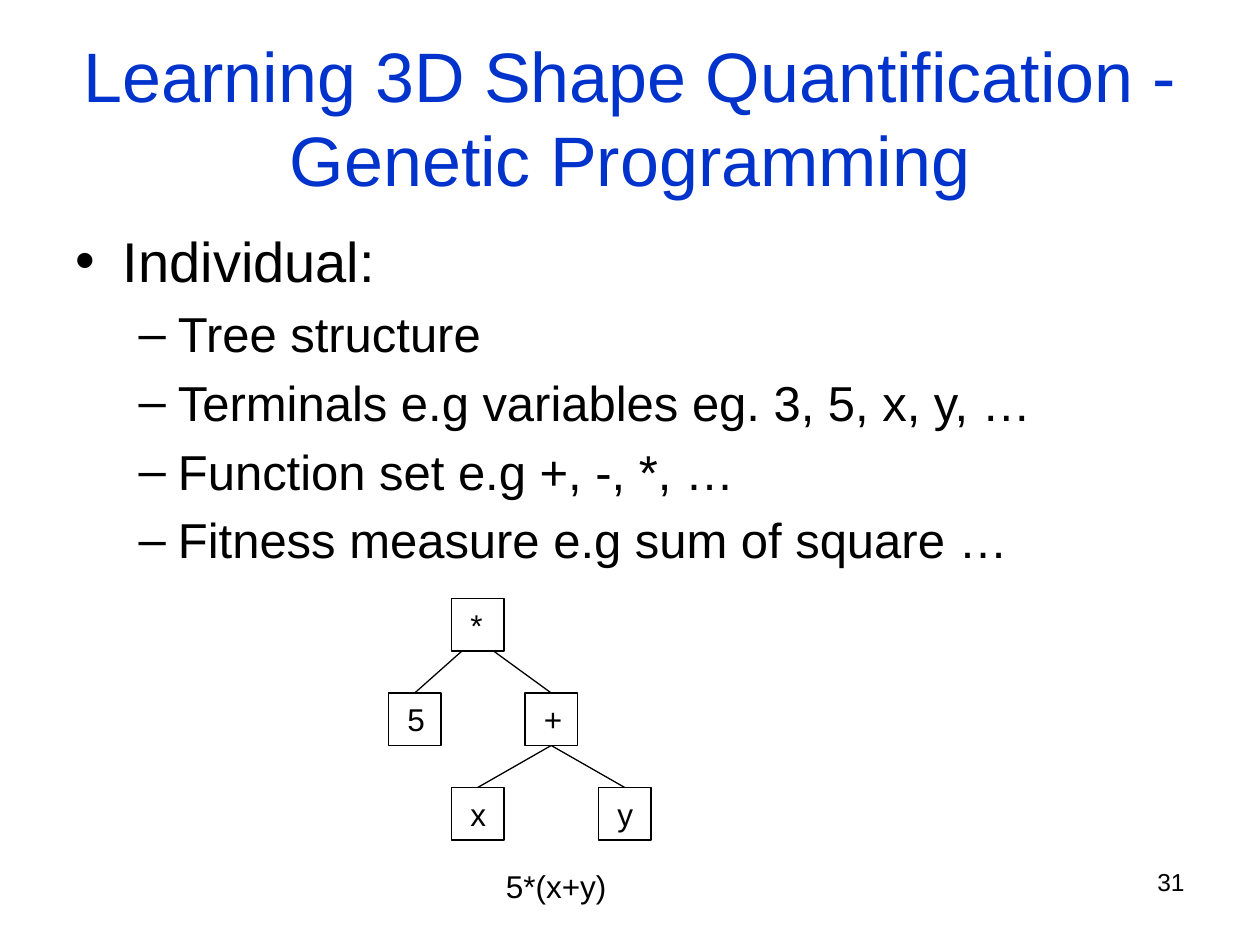
from pptx import Presentation
from pptx.dml.color import RGBColor
from pptx.enum.shapes import MSO_CONNECTOR as Connector, MSO_SHAPE as Shape
from pptx.enum.text import MSO_ANCHOR as Anchor, MSO_AUTO_SIZE as AutoSize, PP_ALIGN as Align
from pptx.oxml.ns import qn
from pptx.util import Inches, Pt
from lxml.etree import SubElement

FONT = "Arial"
BLACK, BLUE = "000000", "0033CC"
CELL = Inches(1) // 12
NODE = 5

TITLE = "Learning 3D Shape Quantification -\vGenetic Programming"
POINTS = [
    ("Individual:", 0),
    ("Tree structure", 1),
    ("Terminals e.g variables eg. 3, 5, x, y, …", 1),
    ("Function set e.g +, -, *, …", 1),
    ("Fitness measure e.g sum of square …", 1),
]
NODES = {"*": (6, 0), "5": (0, 9), "+": (13, 9), "x": (6, 18), "y": (20, 18)}
BRANCHES = [("*", "5", 1), ("*", "+", 4), ("+", "x", None), ("+", "y", None)]


def color(hex_string):
    return RGBColor.from_string(hex_string)


def grid(*cells):
    return [round(cell * CELL) for cell in cells]


def style(paragraph, size, hex_string=BLACK, align=None):
    paragraph.font.name = FONT
    paragraph.font.size = Pt(size)
    paragraph.font.color.rgb = color(hex_string)
    paragraph.alignment = align


def place(shape, box):
    shape.left, shape.top, shape.width, shape.height = box


def outline(shape):
    shape.line.color.rgb = color(BLACK)
    shape.line.width = Pt(0.75)


def add_title(slide, box):
    title = slide.shapes.title
    place(title, box)
    frame = title.text_frame
    frame.text = TITLE
    frame.auto_size = AutoSize.NONE
    frame.vertical_anchor = Anchor.MIDDLE
    style(frame.paragraphs[0], 40, BLUE, Align.CENTER)


def add_points(slide, box):
    body = slide.placeholders[1]
    place(body, box)
    frame = body.text_frame
    frame.text = "\n".join(text for text, _ in POINTS)
    frame.auto_size = AutoSize.NONE
    for paragraph, (_, level) in zip(frame.paragraphs, POINTS):
        paragraph.level = level
        style(paragraph, 28 if level else 32)


def add_label(shapes, box, text, size, align=Align.LEFT, wrap=True):
    label = shapes.add_textbox(*box)
    frame = label.text_frame
    frame.word_wrap = wrap
    frame.text = text
    style(frame.paragraphs[0], size, align=align)


def add_node(shapes, box, symbol):
    node = shapes.add_shape(Shape.RECTANGLE, *box)
    node.shadow.inherit = False
    node.fill.background()
    outline(node)
    frame = node.text_frame
    frame.margin_left, frame.margin_right = Inches(0.15), 0
    frame.vertical_anchor = Anchor.MIDDLE
    frame.text = symbol
    style(frame.paragraphs[0], 18, align=Align.LEFT)
    return node


def add_branch(shapes, parent, child, offset):
    start = parent.left + (parent.width // 2 if offset is None else offset * CELL)
    branch = shapes.add_connector(
        Connector.STRAIGHT, start, parent.top + parent.height,
        child.left + child.width // 2, child.top)
    if offset is None:
        branch.begin_connect(parent, 2)
    branch.end_connect(child, 0)
    outline(branch)
    SubElement(branch._element.spPr, qn("a:effectLst"))


def add_tree(slide, box):
    left, top, _, height = box
    shapes = slide.shapes.add_group_shape().shapes
    nodes = {}
    for symbol, (column, row) in NODES.items():
        node_box = (left + column * CELL, top + row * CELL, *grid(NODE, NODE))
        nodes[symbol] = add_node(shapes, node_box, symbol)
    for parent, child, offset in BRANCHES:
        add_branch(shapes, nodes[parent], nodes[child], offset)
    formula_height = round(4.8 * CELL)
    formula_box = (left + 10 * CELL, top + height - formula_height, 12 * CELL, formula_height)
    add_label(shapes, formula_box, "5*(x+y)", 18, wrap=False)


def main():
    deck = Presentation()
    deck.slide_width, deck.slide_height = grid(120, 90)
    slide = deck.slides.add_slide(deck.slide_layouts[1])
    add_title(slide, grid(6, 3.6, 108, 15))
    add_points(slide, grid(6, 21, 108, 59.4))
    add_tree(slide, grid(37, 57, 25, 29.8))
    add_label(slide.shapes, grid(86, 82, 28, 6.25), "31", 14, Align.RIGHT)
    deck.save("out.pptx")


if __name__ == "__main__":
    main()
